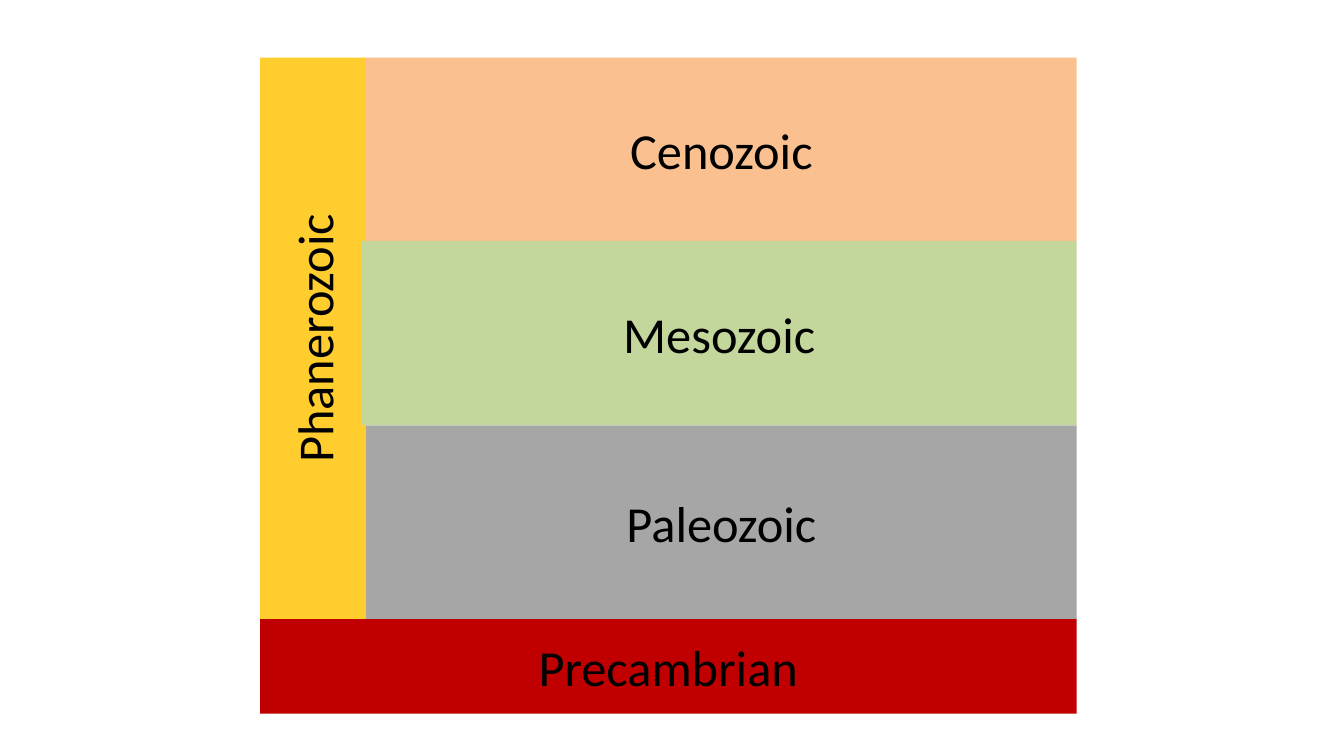
from pptx import Presentation
from pptx.dml.color import RGBColor
from pptx.enum import shapes, text
from pptx.util import Pt

COLORS = {
    "ink": "000000",
    "red": "C00000",
    "gold": "FFCD2D",
    "gray": "A6A6A6",
    "green": "C3D69B",
    "peach": "FAC090",
}
LEFT, RIGHT = 185.8, 769
TOP, BASE, END = 41.2, 442.1, 509.8
SPLIT = 261.6


def paint(name):
    return RGBColor.from_string(COLORS[name])


def write(shape, words, size=36, font="Calibri", color="ink"):
    frame = shape.text_frame
    frame.word_wrap = True
    frame.vertical_anchor = text.MSO_ANCHOR.MIDDLE
    para = frame.paragraphs[0]
    para.alignment = text.PP_ALIGN.CENTER
    run = para.add_run()
    run.text = words
    run.font.size = Pt(size)
    run.font.name = font
    run.font.color.rgb = paint(color)


def block(slide, name, color, left, top, right, end, upward=False):
    """Fill the area between the given edges; upward text turns the shape."""
    width, height = right - left, end - top
    if upward:
        left += (width - height) / 2
        top += (height - width) / 2
        width, height = height, width
    shape = slide.shapes.add_shape(
        shapes.MSO_SHAPE.RECTANGLE, Pt(left), Pt(top), Pt(width), Pt(height))
    shape.rotation = 270 if upward else 0
    shape.shadow.inherit = False
    shape.fill.solid()
    shape.fill.fore_color.rgb = paint(color)
    shape.line.fill.background()
    write(shape, name)


def main():
    deck = Presentation()
    deck.slide_width, deck.slide_height = Pt(960), Pt(540)
    slide = deck.slides.add_slide(deck.slide_layouts[6])

    block(slide, "Precambrian", "red", LEFT, BASE, RIGHT, END)
    block(slide, "Phanerozoic", "gold", LEFT, TOP, SPLIT, BASE, upward=True)

    # Eras from the oldest up, each resting on the one before
    end = BASE
    for name, color, left, top in (
        ("Paleozoic", "gray", SPLIT, 303.8),
        ("Mesozoic", "green", 258.5, 172.1),
        ("Cenozoic", "peach", SPLIT, TOP),
    ):
        block(slide, name, color, left, top, RIGHT, end)
        end = top

    deck.save("out.pptx")


if __name__ == "__main__":
    main()
